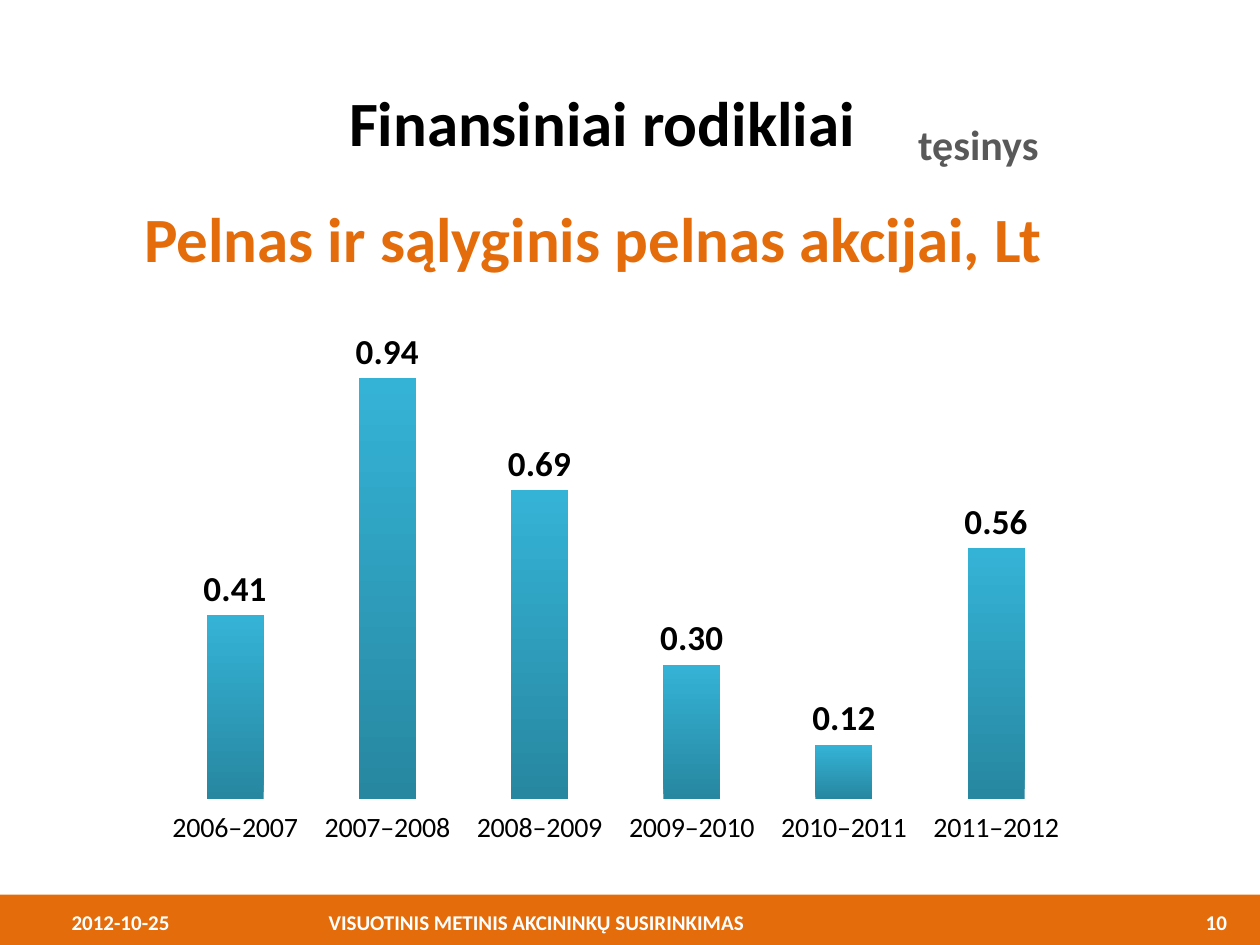
from lxml import etree
from pptx import Presentation
from pptx.chart.data import CategoryChartData
from pptx.dml.color import RGBColor
from pptx.enum.chart import XL_CHART_TYPE, XL_LABEL_POSITION, XL_TICK_MARK
from pptx.enum.shapes import MSO_SHAPE
from pptx.enum.text import MSO_ANCHOR, PP_ALIGN
from pptx.oxml.ns import qn
from pptx.util import Inches, Pt

COLUMN = XL_CHART_TYPE.COLUMN_CLUSTERED
OUTSIDE = XL_LABEL_POSITION.OUTSIDE_END
TICK_OUT, TICK_NONE = XL_TICK_MARK.OUTSIDE, XL_TICK_MARK.NONE
RECTANGLE = MSO_SHAPE.RECTANGLE
MIDDLE, TOP = MSO_ANCHOR.MIDDLE, MSO_ANCHOR.TOP
LEFT, CENTER = PP_ALIGN.LEFT, PP_ALIGN.CENTER

THEME = {
    "font": "Calibri", "orange": "E46C0A", "black": "000000", "gray": "595959",
    "white": "FFFFFF", "bar_top": "34B3D6", "bar_bottom": "2787A0",
    "heading": 36, "note": 24, "value": 20, "category": 16, "footer": 12,
}

TITLE = "Finansiniai rodikliai"
SUBTITLE = "Pelnas ir sąlyginis pelnas akcijai, Lt"
NOTE = "tęsinys"
FOOTER = ["2012-10-25", "VISUOTINIS METINIS AKCININKŲ SUSIRINKIMAS", "10"]
FOOTER_TABS = [(2.04, "l"), (9.17, "r")]
PROFIT = {
    "2006–2007": 0.41, "2007–2008": 0.94, "2008–2009": 0.69,
    "2009–2010": 0.30, "2010–2011": 0.12, "2011–2012": 0.56,
}
PLOT_AREA = {"x": 0.02, "y": 0.04, "w": 0.95, "h": 0.85}


def color(name):
    """Return a theme colour."""
    return RGBColor.from_string(THEME[name])


def style_font(font, size, tint, bold=True):
    """Apply theme type to a font."""
    font.name, font.size, font.bold = THEME["font"], Pt(THEME[size]), bold
    font.color.rgb = color(tint)


def place(shape, box):
    """Move and size a shape in inches."""
    shape.left, shape.top, shape.width, shape.height = map(Inches, box)


def write(shape, text, size, tint, align=LEFT, anchor=MIDDLE):
    """Write one styled run into a shape and return its paragraph."""
    frame = shape.text_frame
    frame.word_wrap, frame.vertical_anchor = True, anchor
    paragraph = frame.paragraphs[0]
    paragraph.alignment = align
    run = paragraph.add_run()
    run.text = text
    style_font(run.font, size, tint)
    return paragraph


def add_text(slide, box, *content):
    """Add a text box and return its paragraph."""
    return write(slide.shapes.add_textbox(*map(Inches, box)), *content)


def add_footer(slide):
    """Add the orange band and its tabbed line of text."""
    band = slide.shapes.add_shape(RECTANGLE, *map(Inches, (0, 7.1, 10, 0.4)))
    band.shadow.inherit = False
    band.fill.solid()
    band.fill.fore_color.rgb = color("orange")
    band.line.fill.background()
    paragraph = add_text(slide, (0.47, 7.12, 9.4, 0.4), "\t".join(FOOTER), "footer", "white")
    tabs = etree.SubElement(paragraph._p.get_or_add_pPr(), qn("a:tabLst"))
    for position, align in FOOTER_TABS:
        etree.SubElement(tabs, qn("a:tab"), pos=str(Inches(position)), algn=align)


def set_plot_area(chart):
    """Fix the inner plot area as fractions of the chart."""
    plot_area = chart._chartSpace.chart.plotArea
    for old in plot_area.findall(qn("c:layout")):
        plot_area.remove(old)
    layout = etree.Element(qn("c:layout"))
    plot_area.insert(0, layout)
    manual = etree.SubElement(layout, qn("c:manualLayout"))
    settings = {"layoutTarget": "inner", "xMode": "edge", "yMode": "edge", **PLOT_AREA}
    for name, value in settings.items():
        etree.SubElement(manual, qn(f"c:{name}"), val=str(value))


def add_profit_chart(slide):
    """Add the column chart of profit per share."""
    data = CategoryChartData(number_format="0.00")
    data.categories = list(PROFIT)
    data.add_series("Series 1", list(PROFIT.values()))
    box = map(Inches, (1.11, 2.62, 7.63, 4.18))
    chart = slide.shapes.add_chart(COLUMN, *box, data).chart
    chart.has_legend = chart.has_title = False
    style_font(chart.font, "category", "black", False)
    set_plot_area(chart)

    categories, values = chart.category_axis, chart.value_axis
    categories.major_tick_mark = TICK_OUT
    categories.minor_tick_mark = TICK_NONE
    categories.format.line.fill.background()
    style_font(categories.tick_labels.font, "category", "black", False)
    values.minimum_scale, values.maximum_scale = 0, 1
    values.has_major_gridlines = values.visible = False

    plot = chart.plots[0]
    plot.gap_width, plot.vary_by_categories = 167, False
    fill = plot.series[0].format.fill
    fill.gradient()
    fill.gradient_angle = 90
    for stop, tint in zip(fill.gradient_stops, ("bar_bottom", "bar_top")):
        stop.color.rgb = color(tint)
    plot.has_data_labels = True
    labels = plot.data_labels
    labels.show_value, labels.position = True, OUTSIDE
    labels.number_format, labels.number_format_is_linked = "0.00", False
    style_font(labels.font, "value", "black")


def main():
    """Build and save the slide."""
    presentation = Presentation()
    presentation.slide_width, presentation.slide_height = Inches(10), Inches(7.5)
    slide = presentation.slides.add_slide(presentation.slide_layouts[5])
    add_footer(slide)
    title = slide.shapes.title
    place(title, (0, 0.63, 9.99, 0.67))
    title.text_frame.margin_left = Inches(2.77)
    write(title, TITLE, "heading", "black")
    add_text(slide, (0.87, 1.41, 7.68, 0.94), SUBTITLE, "heading", "orange", CENTER)
    add_text(slide, (6.87, 0.89, 1.79, 0.5), NOTE, "note", "gray", CENTER, TOP)
    add_profit_chart(slide)
    presentation.save("out.pptx")


if __name__ == "__main__":
    main()
